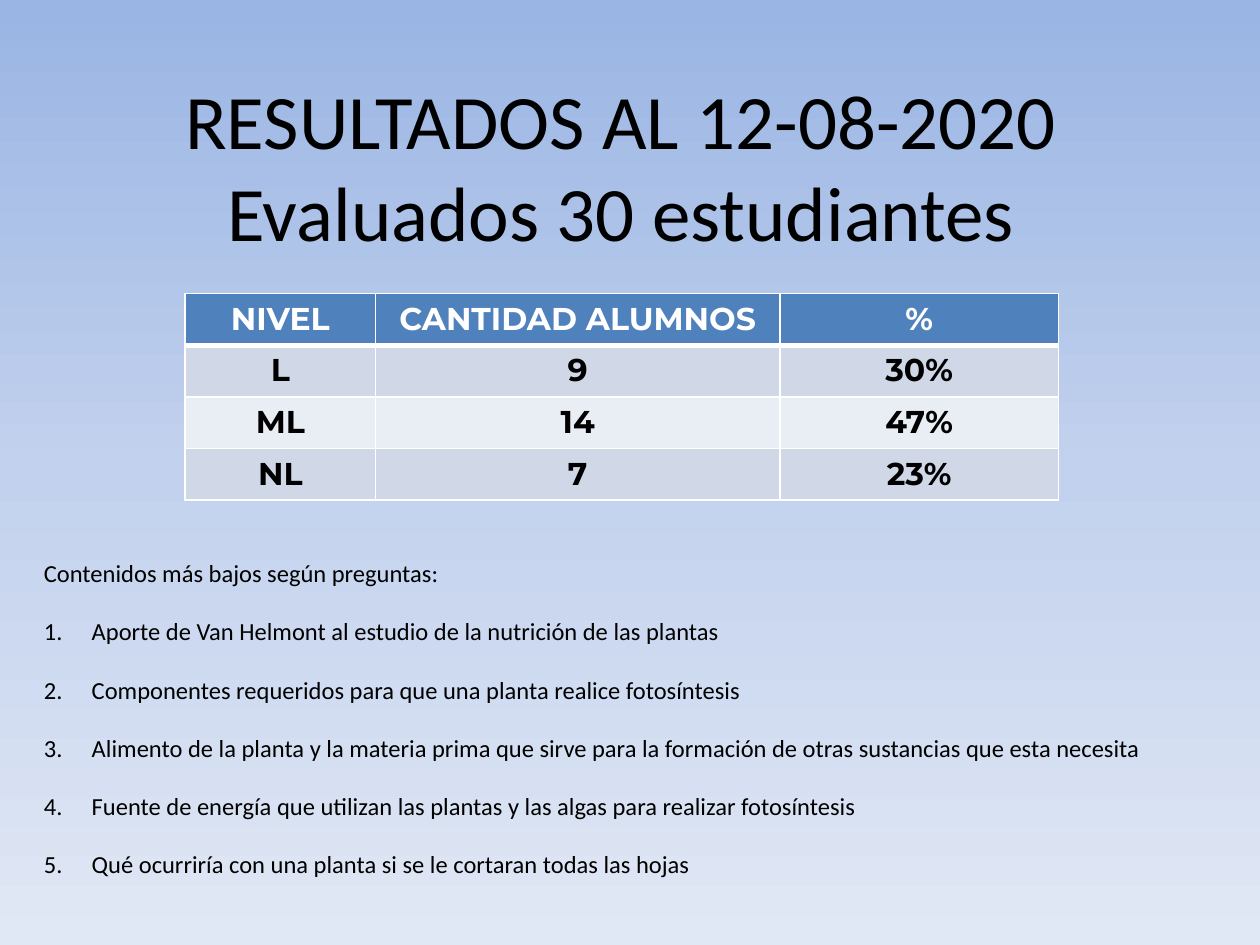
from copy import deepcopy

from lxml.etree import SubElement
from pptx import Presentation
from pptx.dml.color import RGBColor
from pptx.enum.text import MSO_ANCHOR, PP_ALIGN
from pptx.oxml.ns import qn
from pptx.util import Inches, Pt

# Content
TITLE = "RESULTADOS AL 12-08-2020\vEvaluados 30 estudiantes"
RESULTS = [
    ("NIVEL", "CANTIDAD ALUMNOS", "%"),
    ("L", "9", "30%"),
    ("ML", "14", "47%"),
    ("NL", "7", "23%"),
]
INTRO = "Contenidos más bajos según preguntas:"
TOPICS = [
    "Aporte de Van Helmont al estudio de la nutrición de las plantas",
    "Componentes requeridos para que una planta realice fotosíntesis",
    "Alimento de la planta y la materia prima que sirve para la formación "
    "de otras sustancias que esta necesita",
    "Fuente de energía que utilizan las plantas y las algas para realizar fotosíntesis",
    "Qué ocurriría con una planta si se le cortaran todas las hojas",
]

# Format
COLORS = {
    "text": "000000", "white": "FFFFFF", "header": "4F81BD",
    "odd": "D0D8E8", "even": "E9EDF4",
    "sky_top": "9AB5E4", "sky_mid": "C2D1ED", "sky_low": "E1E8F5",
}
TITLE_FONT = {"name": "Calibri", "size": Pt(44)}
TABLE_FONT = {"name": "Montserrat", "size": Pt(18), "bold": True}
TOPIC_FONT = {"name": "Calibri", "size": Pt(14)}
COLUMN_WIDTHS = [1.51, 3.21, 2.21]
ROW_HEIGHT = 0.41
NUMBER_INDENT = Inches(0.38)
TOPIC_GAP = Pt(16.5)


def rgb(key):
    return RGBColor.from_string(COLORS[key])


def write(paragraph, text, font, color="text", align=PP_ALIGN.LEFT):
    paragraph.text = text
    paragraph.alignment = align
    for run in paragraph.runs:
        for attribute, value in font.items():
            setattr(run.font, attribute, value)
        run.font.color.rgb = rgb(color)


def add_text_frame(slide, left, top, width, height):
    box = slide.shapes.add_textbox(Inches(left), Inches(top), Inches(width), Inches(height))
    box.text_frame.word_wrap = True
    return box.text_frame


def paint_background(slide):
    fill = slide.background.fill
    fill.gradient()
    fill.gradient_angle = 270
    first = fill.gradient_stops[0]._gs
    first.addnext(deepcopy(first))
    for stop, key, position in zip(
            fill.gradient_stops, ("sky_top", "sky_mid", "sky_low"), (0, 0.5, 1)):
        stop.color.rgb = rgb(key)
        stop.position = position


def border_cell(cell, widths):
    properties = cell._tc.get_or_add_tcPr()
    for index, (side, width) in enumerate(widths.items()):
        line = properties.makeelement(qn(f"a:{side}"), {"w": str(Pt(width))})
        solid = SubElement(line, qn("a:solidFill"))
        SubElement(solid, qn("a:srgbClr"), val=COLORS["white"])
        properties.insert(index, line)


def number(paragraph):
    properties = paragraph._p.get_or_add_pPr()
    properties.set("marL", str(NUMBER_INDENT))
    properties.set("indent", str(-NUMBER_INDENT))
    SubElement(properties, qn("a:buFont"), typeface="+mj-lt")
    SubElement(properties, qn("a:buAutoNum"), type="arabicPeriod")


def add_results(slide):
    table = slide.shapes.add_table(
        len(RESULTS), len(COLUMN_WIDTHS), Inches(1.47), Inches(2.33),
        Inches(sum(COLUMN_WIDTHS)), Inches(ROW_HEIGHT * len(RESULTS))).table
    for column, width in zip(table.columns, COLUMN_WIDTHS):
        column.width = Inches(width)
    for r, values in enumerate(RESULTS):
        table.rows[r].height = Inches(ROW_HEIGHT)
        fill = "header" if r == 0 else "odd" if r % 2 else "even"
        # A thick rule parts the header from the body
        widths = {"lnL": 1, "lnR": 1, "lnT": 3 if r == 1 else 1, "lnB": 3 if r == 0 else 1}
        for c, value in enumerate(values):
            cell = table.cell(r, c)
            cell.fill.solid()
            cell.fill.fore_color.rgb = rgb(fill)
            border_cell(cell, widths)
            write(cell.text_frame.paragraphs[0], value, TABLE_FONT,
                  "text" if r else "white", PP_ALIGN.CENTER)


def main():
    prs = Presentation()
    prs.slide_width, prs.slide_height = Inches(10), Inches(7.5)
    slide = prs.slides.add_slide(prs.slide_layouts[6])
    paint_background(slide)

    # Title
    title = add_text_frame(slide, 0.43, 0.44, 9, 1.73)
    title.vertical_anchor = MSO_ANCHOR.MIDDLE
    write(title.paragraphs[0], TITLE, TITLE_FONT, align=PP_ALIGN.CENTER)

    # Results table
    add_results(slide)

    # Weakest topics
    topics = add_text_frame(slide, 0.25, 4.38, 9.37, 2.93)
    write(topics.paragraphs[0], INTRO, TOPIC_FONT)
    for topic in TOPICS:
        paragraph = topics.add_paragraph()
        write(paragraph, topic, TOPIC_FONT)
        paragraph.space_before = TOPIC_GAP
        number(paragraph)

    prs.save("out.pptx")


if __name__ == "__main__":
    main()
